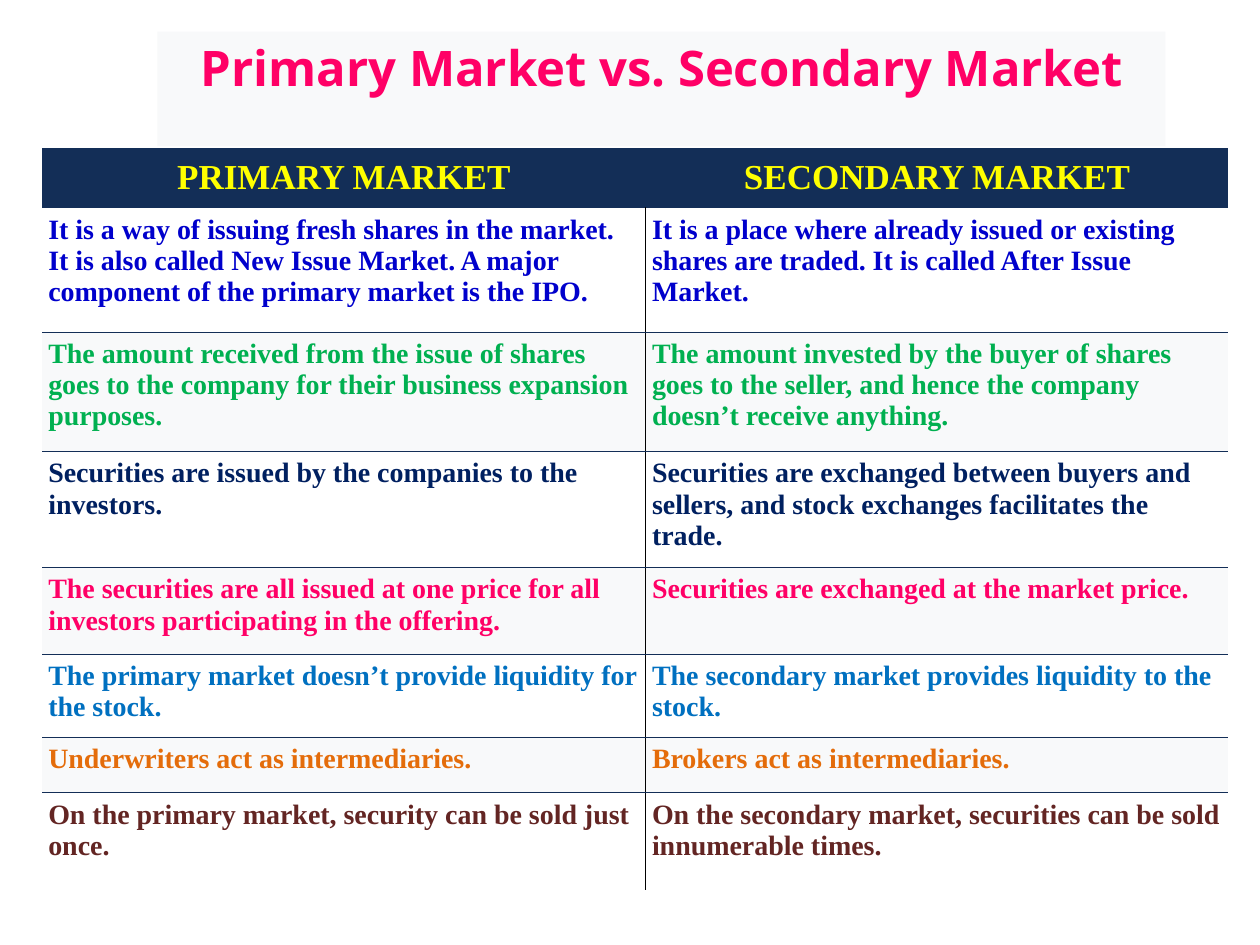
from pptx import Presentation
from pptx.dml.color import RGBColor
from pptx.enum.shapes import MSO_SHAPE
from pptx.enum.text import MSO_ANCHOR, PP_ALIGN
from pptx.oxml.ns import qn
from pptx.util import Pt
from lxml.etree import SubElement

NAVY = RGBColor(0x13, 0x2E, 0x57)
BLACK = RGBColor(0, 0, 0)
WHITE = RGBColor(0xFF, 0xFF, 0xFF)
PALE = RGBColor(0xF8, 0xF9, 0xFA)
YELLOW = RGBColor(0xFF, 0xFF, 0)
BLUE = RGBColor(0, 0, 0xCC)
GREEN = RGBColor(0, 0xB0, 0x50)
DARK_BLUE = RGBColor(0, 0x20, 0x60)
PINK = RGBColor(0xFF, 0, 0x66)
SKY = RGBColor(0, 0x70, 0xC0)
ORANGE = RGBColor(0xE4, 0x6C, 0x0A)
MAROON = RGBColor(0x63, 0x25, 0x23)

# Row height, text colour, primary market, secondary market
ROWS = [
    (34.5, YELLOW, "PRIMARY MARKET", "SECONDARY MARKET"),
    (71, BLUE,
     "It is a way of issuing fresh shares in the market. It is also called New Issue Market. "
     "A major component of the primary market is the IPO.",
     "It is a place where already issued or existing shares are traded. "
     "It is called After Issue Market."),
    (68.3, GREEN,
     "The amount received from the issue of shares goes to the company for their "
     "business expansion purposes.",
     "The amount invested by the buyer of shares goes to the seller, and hence the company "
     "doesn’t receive anything."),
    (66.3, DARK_BLUE,
     "Securities are issued by the companies to the investors.",
     "Securities are exchanged between buyers and sellers, and stock exchanges "
     "facilitates the trade."),
    (49.7, PINK,
     "The securities are all issued at one price for all investors participating in the offering.",
     "Securities are exchanged at the market price."),
    (47.5, SKY,
     "The primary market doesn’t provide liquidity for the stock.",
     "The secondary market provides liquidity to the stock."),
    (31.5, ORANGE, "Underwriters act as intermediaries.", "Brokers act as intermediaries."),
    (55.5, MAROON,
     "On the primary market, security can be sold just once.",
     "On the secondary market, securities can be sold innumerable times."),
]
COLUMN_WIDTHS = [345, 333]


def add_bold_text(paragraph, text, font_name, size, color):
    span = paragraph.add_run()
    span.text = text
    span.font.name = font_name
    span.font.size = Pt(size)
    span.font.bold = True
    span.font.color.rgb = color


def set_border(cell, side, color, width):
    """Draw one cell side (L, R, T or B, in that order); no colour hides it."""
    line = SubElement(cell._tc.get_or_add_tcPr(), qn(f"a:ln{side}"), w=str(Pt(width)))
    if color is None:
        SubElement(line, qn("a:noFill"))
    else:
        fill = SubElement(line, qn("a:solidFill"))
        SubElement(fill, qn("a:srgbClr"), val=str(color))


deck = Presentation()
deck.slide_width, deck.slide_height = Pt(720), Pt(540)
page = deck.slides.add_slide(deck.slide_layouts[6])

# Comparison table
table_height = sum(row[0] for row in ROWS)
table = page.shapes.add_table(len(ROWS), 2, Pt(24), Pt(84.3), Pt(sum(COLUMN_WIDTHS)),
                              Pt(table_height)).table
for column, width in zip(table.columns, COLUMN_WIDTHS):
    column.width = Pt(width)

for row_index, (height, color, *texts) in enumerate(ROWS):
    table.rows[row_index].height = Pt(height)
    is_header = row_index == 0
    is_last = row_index == len(ROWS) - 1
    divider = None if is_header else BLACK
    for column_index, text in enumerate(texts):
        cell = table.cell(row_index, column_index)
        set_border(cell, "L", divider if column_index == 1 else None, 1)
        set_border(cell, "R", divider if column_index == 0 else None, 1)
        set_border(cell, "T", None if is_header else NAVY, 0.75)
        set_border(cell, "B", None if is_last else NAVY, 0.75)
        cell.fill.solid()
        cell.fill.fore_color.rgb = NAVY if is_header else (PALE, WHITE)[row_index % 2]
        cell.margin_left = cell.margin_right = Pt(3.6)
        cell.margin_top = cell.margin_bottom = Pt(3.6)
        cell.vertical_anchor = MSO_ANCHOR.MIDDLE if is_header else MSO_ANCHOR.TOP
        paragraph = cell.text_frame.paragraphs[0]
        paragraph.alignment = PP_ALIGN.CENTER if is_header else PP_ALIGN.LEFT
        add_bold_text(paragraph, text, "Times New Roman", 20 if is_header else 16, color)

# Title
title = page.shapes.add_shape(MSO_SHAPE.RECTANGLE, Pt(90), Pt(18), Pt(576), Pt(65.5))
title.shadow.inherit = False
title.fill.solid()
title.fill.fore_color.rgb = PALE
title.line.fill.background()
title.text_frame.word_wrap = True
title.text_frame.vertical_anchor = MSO_ANCHOR.TOP
heading = title.text_frame.paragraphs[0]
heading.alignment = PP_ALIGN.CENTER
add_bold_text(heading, "Primary Market vs. Secondary Market", "Open Sans", 28, PINK)

deck.save("out.pptx")
